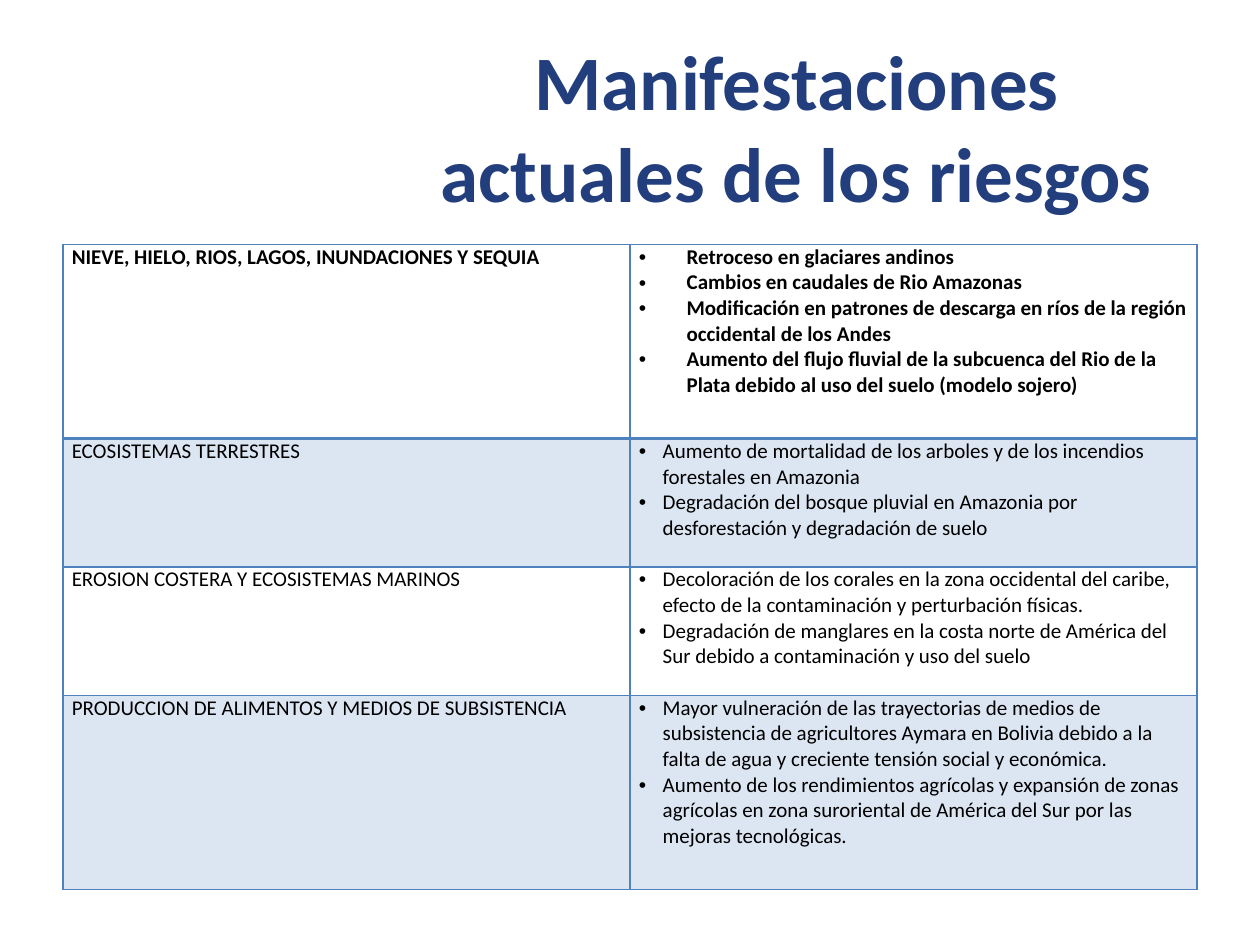
from lxml import etree
from pptx import Presentation
from pptx.dml.color import RGBColor
from pptx.enum import text
from pptx.oxml import ns
from pptx.util import Inches, Pt

NAVY = RGBColor(0x22, 0x3E, 0x7D)
BLUE = RGBColor(0x4F, 0x81, 0xBD)
PALE_BLUE = RGBColor(0xDC, 0xE6, 0xF2)
BLACK = RGBColor(0, 0, 0)
FONT = "Calibri"

TITLE = "Manifestaciones actuales de los riesgos"

# (sector, manifestations, row height)
RISKS = [
    ("NIEVE, HIELO, RIOS, LAGOS, INUNDACIONES Y SEQUIA", [
        "Retroceso en glaciares andinos",
        "Cambios en caudales de Rio Amazonas",
        "Modificación en patrones de descarga en ríos de la región occidental de los Andes",
        "Aumento del flujo fluvial de la subcuenca del Rio de la Plata debido al uso "
        "del suelo (modelo sojero)",
    ], 1.54),
    ("ECOSISTEMAS TERRESTRES", [
        "Aumento de mortalidad de los arboles y de los incendios forestales en Amazonia",
        "Degradación del bosque pluvial en Amazonia por desforestación y degradación de suelo",
    ], 1.02),
    ("EROSION COSTERA Y ECOSISTEMAS MARINOS", [
        "Decoloración de los corales en la zona occidental del caribe, efecto de la "
        "contaminación y perturbación físicas.",
        "Degradación de manglares en la costa norte de América del Sur debido a "
        "contaminación y uso del suelo",
    ], 1.02),
    ("PRODUCCION DE ALIMENTOS Y MEDIOS DE SUBSISTENCIA", [
        "Mayor vulneración de las trayectorias de medios de subsistencia de agricultores "
        "Aymara en Bolivia debido a la falta de agua y creciente tensión social y económica.",
        "Aumento de los rendimientos agrícolas y expansión de zonas agrícolas en zona "
        "suroriental de América del Sur por las mejoras tecnológicas.",
    ], 1.54),
]


def set_font(paragraph, size, color, bold):
    font = paragraph.font
    font.name, font.size, font.bold = FONT, Pt(size), bold
    font.color.rgb = color


def add_bullet(paragraph, indent):
    props = paragraph._p.get_or_add_pPr()
    props.set("marL", str(Inches(indent)))
    props.set("indent", str(-Inches(indent)))
    etree.SubElement(props, ns.qn("a:buFont"), typeface="Arial")
    etree.SubElement(props, ns.qn("a:buChar"), char="•")


def add_borders(cell, widths):
    props = cell._tc.get_or_add_tcPr()
    for side, width in widths.items():
        line = etree.SubElement(props, ns.qn(f"a:ln{side}"), w=str(Pt(width)))
        fill = etree.SubElement(line, ns.qn("a:solidFill"))
        etree.SubElement(fill, ns.qn("a:srgbClr"), val=str(BLUE))


def fill_cell(cell, lines, row, indent=None):
    cell.margin_left = cell.margin_right = Inches(0.07)
    cell.margin_top = cell.margin_bottom = 0
    # The rule under the first row is double weight
    add_borders(cell, {"L": 1, "R": 1, "T": 2 if row == 1 else 1, "B": 2 if row == 0 else 1})
    if row % 2:
        cell.fill.solid()
        cell.fill.fore_color.rgb = PALE_BLUE
    else:
        cell.fill.background()
    cell.text_frame.text = "\n".join(lines)
    for paragraph in cell.text_frame.paragraphs:
        if indent:
            add_bullet(paragraph, indent)
        set_font(paragraph, 12, BLACK, row == 0)


prs = Presentation()
prs.slide_width, prs.slide_height = Inches(10), Inches(7.5)
slide = prs.slides.add_slide(prs.slide_layouts[6])

# Title
title = slide.shapes.add_textbox(Inches(3.15), Inches(0.3), Inches(6.35), Inches(1.4)).text_frame
title.word_wrap = True
title.vertical_anchor = text.MSO_ANCHOR.MIDDLE
title.text = TITLE
title.paragraphs[0].alignment = text.PP_ALIGN.CENTER
set_font(title.paragraphs[0], 44, NAVY, True)

# Risk table
total_height = sum(height for _, _, height in RISKS)
table = slide.shapes.add_table(len(RISKS), 2, Inches(0.5), Inches(1.94),
                               Inches(9), Inches(total_height)).table
table.first_row = table.horz_banding = False
for row, (sector, manifestations, height) in enumerate(RISKS):
    table.rows[row].height = Inches(height)
    fill_cell(table.cell(row, 0), [sector], row)
    fill_cell(table.cell(row, 1), manifestations, row, indent=0.19 if row else 0.38)

prs.save("out.pptx")
